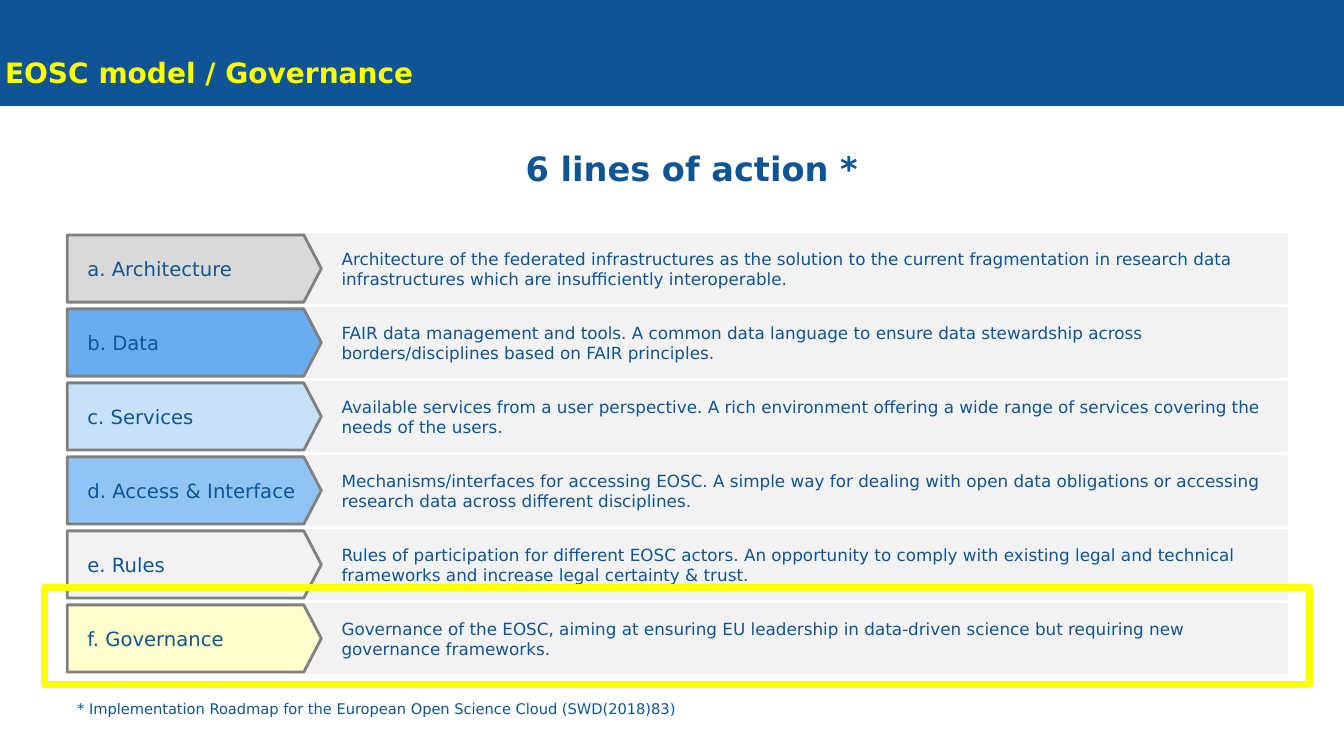
"""Build the EOSC governance slide with its six lines of action."""
from pptx import Presentation
from pptx.dml.color import RGBColor
from pptx.enum.shapes import MSO_SHAPE
from pptx.enum.text import MSO_ANCHOR, PP_ALIGN
from pptx.util import Pt

BLUE, YELLOW, PALE_GREY, GREY = "0F5494", "FFFF00", "F2F2F2", "808080"
ROW_LEFT, ROW_TOP, ROW_PITCH, ROW_HEIGHT = 48, 167.8, 52.85, 48

presentation = Presentation()
presentation.slide_width = Pt(960)
presentation.slide_height = Pt(540)
slide = presentation.slides.add_slide(presentation.slide_layouts[6])


def add_box(kind, left, top, width, height, fill, line, line_width):
    """Add a preset shape; fill may be None for an open frame."""
    shape = slide.shapes.add_shape(kind, Pt(left), Pt(top), Pt(width), Pt(height))
    shape.shadow.inherit = False
    if fill:
        shape.fill.solid()
        shape.fill.fore_color.rgb = RGBColor.from_string(fill)
    else:
        shape.fill.background()
    shape.line.color.rgb = RGBColor.from_string(line)
    shape.line.width = Pt(line_width)
    return shape


def write(shape, text, size, color=BLUE, bold=False, align=PP_ALIGN.LEFT,
          anchor=MSO_ANCHOR.TOP, inset=7.2):
    """Write one formatted paragraph; inset is the left margin."""
    frame = shape.text_frame
    frame.word_wrap = True
    frame.vertical_anchor = anchor
    frame.margin_left = Pt(inset)
    paragraph = frame.paragraphs[0]
    paragraph.text = text
    paragraph.alignment = align
    paragraph.font.name = "DejaVu Sans"
    paragraph.font.size = Pt(size)
    paragraph.font.bold = bold
    paragraph.font.color.rgb = RGBColor.from_string(color)


add_box(MSO_SHAPE.RECTANGLE, 0, 0, 960, 75.6, BLUE, BLUE, 0.75)
title = slide.shapes.add_textbox(Pt(0), Pt(36), Pt(448), Pt(31.7))
write(title, "EOSC model / Governance", 20, color=YELLOW, bold=True, inset=3.6)
heading = slide.shapes.add_textbox(Pt(0), Pt(102.2), Pt(960), Pt(55.4))
write(heading, "6 lines of action *", 24, bold=True, align=PP_ALIGN.CENTER, inset=35.3)

actions = [
    ("a. Architecture", "D9D9D9",
     "Architecture of the federated infrastructures as the solution to the current "
     "fragmentation in research data infrastructures which are insufficiently interoperable."),
    ("b. Data", "66AEF0",
     "FAIR data management and tools. A common data language to ensure data stewardship "
     "across borders/disciplines based on FAIR principles."),
    ("c. Services", "C7E1F9",
     "Available services from a user perspective. A rich environment offering a wide range "
     "of services covering the needs of the users."),
    ("d. Access & Interface", "90C4F4",
     "Mechanisms/interfaces for accessing EOSC. A simple way for dealing with open data "
     "obligations or accessing research data across different disciplines."),
    ("e. Rules", PALE_GREY,
     "Rules of participation for different EOSC actors. An opportunity to comply with "
     "existing legal and technical frameworks and increase legal certainty & trust."),
    ("f. Governance", "FFFFCC",
     "Governance of the EOSC, aiming at ensuring EU leadership in data-driven science "
     "but requiring new governance frameworks."),
]
for row, (label, color, description) in enumerate(actions):
    top = ROW_TOP + row * ROW_PITCH
    bar = add_box(MSO_SHAPE.RECTANGLE, 208, top, 710.6, ROW_HEIGHT, PALE_GREY, PALE_GREY, 2.25)
    write(bar, description, 12, anchor=MSO_ANCHOR.MIDDLE, inset=36)
    tag = add_box(MSO_SHAPE.PENTAGON, ROW_LEFT, top, 181.5, ROW_HEIGHT, color, GREY, 2)
    tag.adjustments[0] = 0.26
    write(tag, label, 14, anchor=MSO_ANCHOR.MIDDLE, inset=14.4)

add_box(MSO_SHAPE.RECTANGLE, 31.7, 419.8, 903.6, 69.1, None, YELLOW, 5)
footnote = slide.shapes.add_textbox(Pt(ROW_LEFT), Pt(496), Pt(640), Pt(20))
write(footnote, "* Implementation Roadmap for the European Open Science Cloud (SWD(2018)83)", 10.5)

presentation.save("out.pptx")
